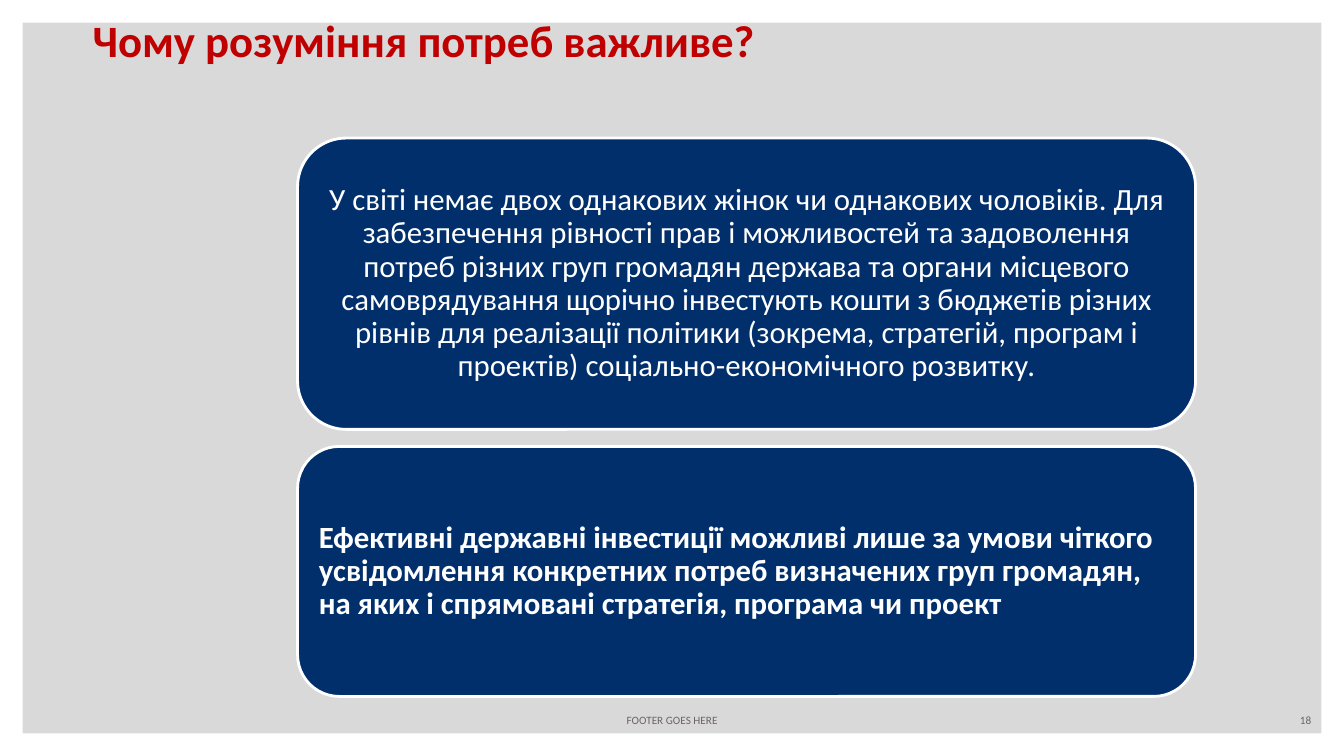
from pptx import Presentation
from pptx.dml.color import RGBColor
from pptx.enum.shapes import MSO_SHAPE
from pptx.enum.text import MSO_ANCHOR, MSO_AUTO_SIZE, PP_ALIGN
from pptx.util import Cm, Pt

FRAME, ROUNDED = MSO_SHAPE.FRAME, MSO_SHAPE.ROUNDED_RECTANGLE
MIDDLE, BOTTOM = MSO_ANCHOR.MIDDLE, MSO_ANCHOR.BOTTOM
LEFT, CENTER, RIGHT = PP_ALIGN.LEFT, PP_ALIGN.CENTER, PP_ALIGN.RIGHT
NO_AUTOFIT = MSO_AUTO_SIZE.NONE

WIDTH, HEIGHT = 33.87, 19.05
WHITE, GREY, NAVY, RED, MUTED = "FFFFFF", "D9D9D9", "002F6C", "C00000", "6C6463"

TITLE = "Чому розуміння потреб важливе?"
DIVERSITY = (
    "У світі немає двох однакових жінок чи однакових чоловіків. "
    "Для забезпечення рівності прав і можливостей та задоволення потреб "
    "різних груп громадян держава та органи місцевого самоврядування "
    "щорічно інвестують кошти з бюджетів різних рівнів для реалізації "
    "політики (зокрема, стратегій, програм і проектів) "
    "соціально-економічного розвитку."
)
INVESTMENT = (
    "Ефективні державні інвестиції можливі лише за умови чіткого "
    "усвідомлення конкретних потреб визначених груп громадян, на яких "
    "і спрямовані стратегія, програма чи проект"
)


def rgb(value):
    return RGBColor.from_string(value)


def write(tf, text, size, color, align, bold=False, anchor=MIDDLE, spacing=0.9):
    tf.text = text
    tf.word_wrap = True
    tf.auto_size = NO_AUTOFIT
    tf.vertical_anchor = anchor
    p = tf.paragraphs[0]
    p.alignment = align
    p.line_spacing = spacing
    font = p.runs[0].font
    font.name, font.size, font.bold = "Calibri", Pt(size), bold
    font.color.rgb = rgb(color)


def add_frame(s):
    sp = s.shapes.add_shape(FRAME, 0, 0, Cm(WIDTH), Cm(HEIGHT))
    sp.adjustments[0] = 0.03
    sp.shadow.inherit = False
    sp.fill.solid()
    sp.fill.fore_color.rgb = rgb(WHITE)
    sp.line.fill.background()
    s.shapes._spTree.insert(2, sp._element)  # behind the title


def set_title(s, text):
    sp = s.shapes.title
    sp.left, sp.top, sp.width, sp.height = Cm(2.08), Cm(0.18), Cm(28.78), Cm(1.63)
    write(sp.text_frame, text, 32, RED, LEFT, bold=True, anchor=BOTTOM)


def add_card(s, top, height, text, align, bold):
    sp = s.shapes.add_shape(ROUNDED, Cm(7.5), Cm(top), Cm(22.63), Cm(height))
    sp.shadow.inherit = False
    sp.fill.solid()
    sp.fill.fore_color.rgb = rgb(NAVY)
    sp.line.color.rgb = rgb(WHITE)
    sp.line.width = Pt(2)
    tf = sp.text_frame
    tf.margin_left = tf.margin_right = tf.margin_top = tf.margin_bottom = Cm(0.23)
    write(tf, text, 22, WHITE, align, bold)


def add_footer(s, left, width, text, align):
    sp = s.shapes.add_textbox(Cm(left), Cm(17.86), Cm(width), Cm(0.58))
    write(sp.text_frame, text, 8, MUTED, align, spacing=1.0)


def main():
    prs = Presentation()
    prs.slide_width, prs.slide_height = Cm(WIDTH), Cm(HEIGHT)
    s = prs.slides.add_slide(prs.slide_layouts[5])

    # Background and title
    s.background.fill.solid()
    s.background.fill.fore_color.rgb = rgb(GREY)
    add_frame(s)
    set_title(s, TITLE)

    # Message cards
    add_card(s, 3.48, 7.34, DIVERSITY, CENTER, False)
    add_card(s, 11.25, 6.3, INVESTMENT, LEFT, True)

    # Footer and slide number
    add_footer(s, 11.58, 10.72, "FOOTER GOES HERE", CENTER)
    add_footer(s, 25.4, 7.9, "18", RIGHT)

    prs.save("out.pptx")


if __name__ == "__main__":
    main()
